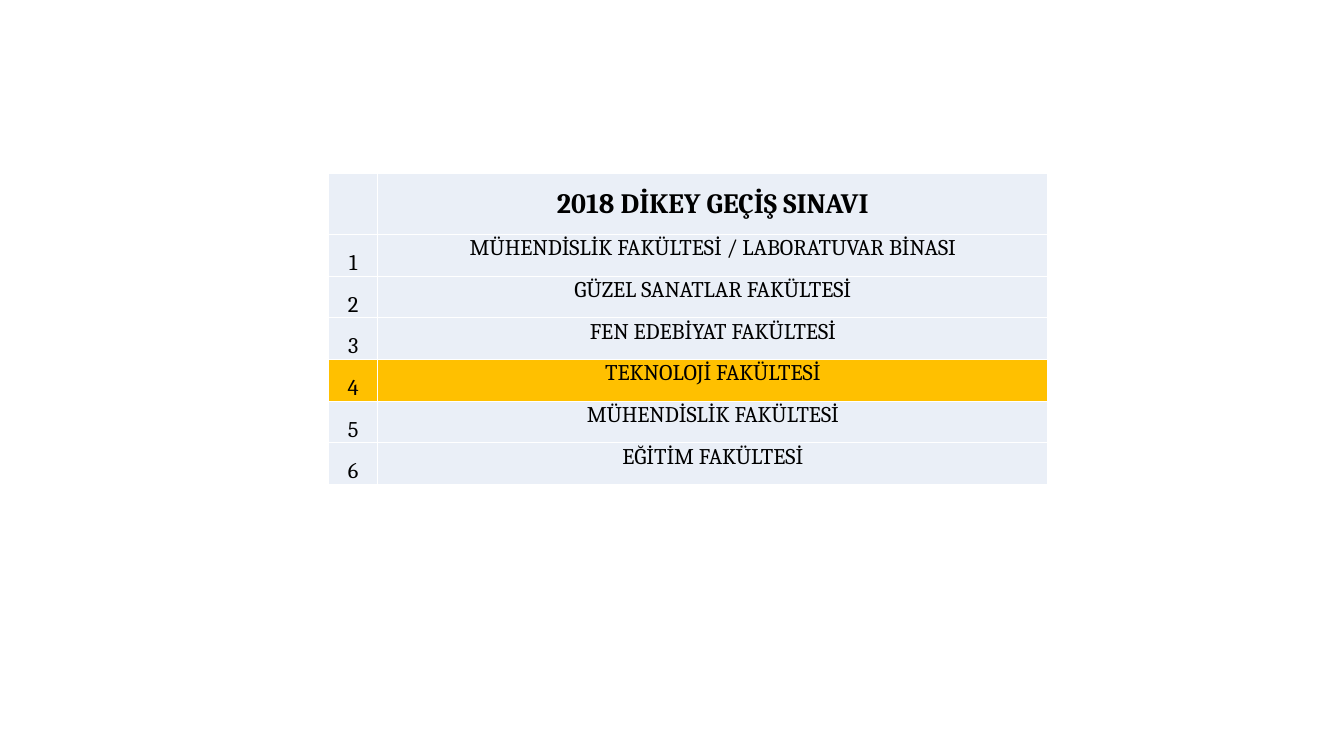
from lxml.etree import SubElement
from pptx import Presentation
from pptx.dml.color import RGBColor
from pptx.enum.text import MSO_ANCHOR as Anchor, PP_ALIGN as Align
from pptx.oxml.ns import qn
from pptx.util import Cm, Pt

# Content
HEAD = "2018 DİKEY GEÇİŞ SINAVI"
PLACES = [
    "MÜHENDİSLİK FAKÜLTESİ / LABORATUVAR BİNASI",
    "GÜZEL SANATLAR FAKÜLTESİ",
    "FEN EDEBİYAT FAKÜLTESİ",
    "TEKNOLOJİ FAKÜLTESİ",
    "MÜHENDİSLİK FAKÜLTESİ",
    "EĞİTİM FAKÜLTESİ",
]
MARKED = 4
FONT = "Cambria"
PALE, GOLD, WHITE, BLACK = "EAEFF7", "FFC000", "FFFFFF", "000000"

# Layout in centimetres
LEFT, TOP = 8.28, 4.37
COLS = [1.24, 16.89]
ROWS = [1.54] + [1.05] * len(PLACES)


def color(code):
    return RGBColor.from_string(code)


def border(cell):
    props = cell._tc.get_or_add_tcPr()
    for side in ("lnL", "lnR", "lnT", "lnB"):
        line = SubElement(props, qn("a:" + side), w=str(Pt(1)))
        fill = SubElement(line, qn("a:solidFill"))
        SubElement(fill, qn("a:srgbClr"), val=WHITE)


def write(cell, text, fill, size, bold, anchor):
    border(cell)
    cell.fill.solid()
    cell.fill.fore_color.rgb = color(fill)
    cell.margin_left = cell.margin_right = cell.margin_top = Cm(0.03)
    cell.margin_bottom = 0
    cell.vertical_anchor = anchor
    cell.text_frame.text = text
    para = cell.text_frame.paragraphs[0]
    para.alignment = Align.CENTER
    for run in para.runs:
        run.font.name = FONT
        run.font.size = Pt(size)
        run.font.bold = bold
        run.font.color.rgb = color(BLACK)


def main():
    deck = Presentation()
    deck.slide_width, deck.slide_height = Cm(33.87), Cm(19.05)
    slide = deck.slides.add_slide(deck.slide_layouts[6])

    # Table grid
    frame = slide.shapes.add_table(
        len(ROWS), len(COLS), Cm(LEFT), Cm(TOP), Cm(sum(COLS)), Cm(sum(ROWS)))
    table = frame.table
    table.horz_banding = False
    for col, width in zip(table.columns, COLS):
        col.width = Cm(width)
    for row, height in zip(table.rows, ROWS):
        row.height = Cm(height)

    # Header row
    for col, text in enumerate(["", HEAD]):
        write(table.cell(0, col), text, PALE, 20, True, Anchor.MIDDLE)

    # Numbered places
    for num, place in enumerate(PLACES, 1):
        fill = GOLD if num == MARKED else PALE
        write(table.cell(num, 0), str(num), fill, 16, False, Anchor.BOTTOM)
        write(table.cell(num, 1), place, fill, 16, False, Anchor.TOP)

    deck.save("out.pptx")


if __name__ == "__main__":
    main()
